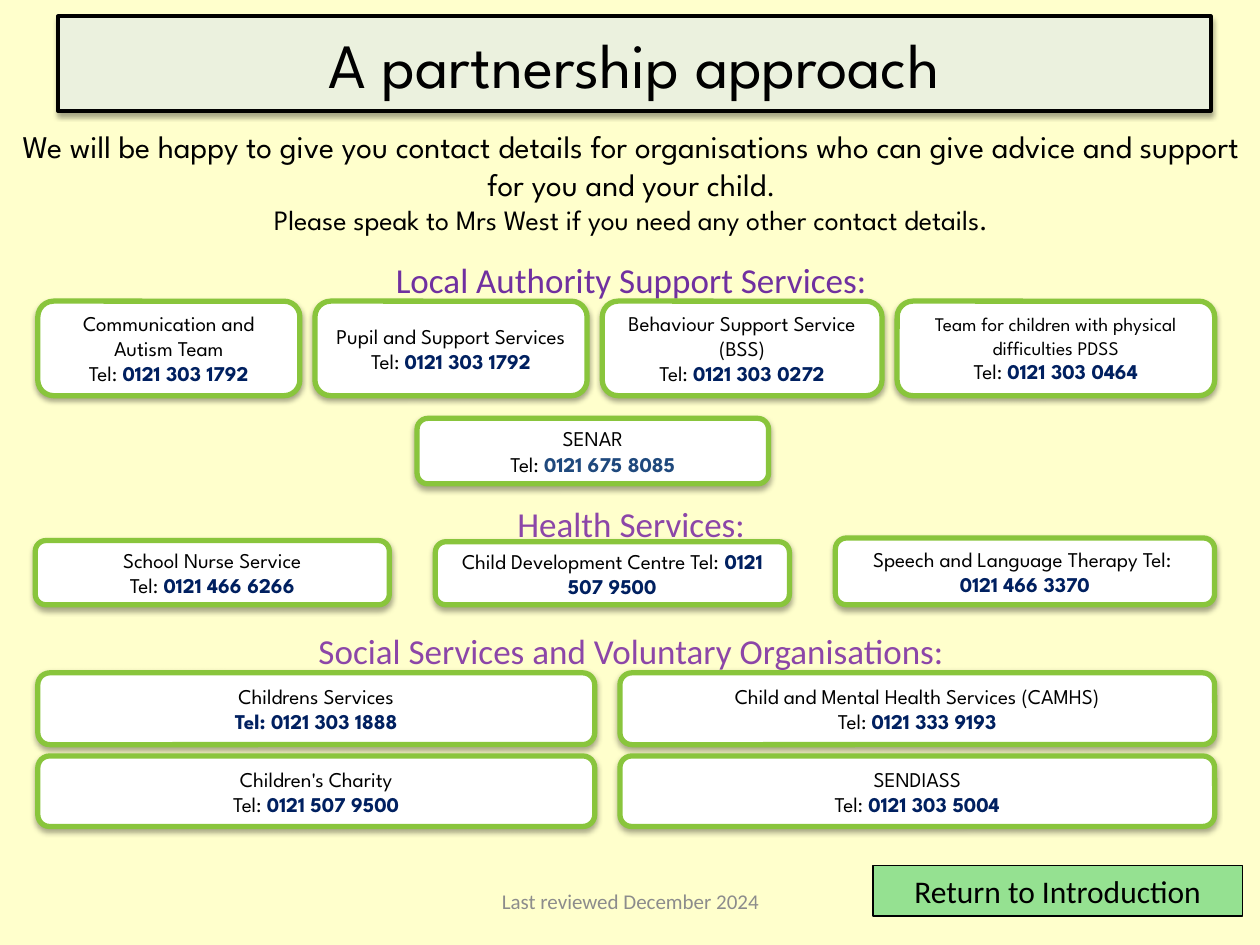
from dataclasses import dataclass
from typing import Optional

from lxml.etree import SubElement
from pptx import Presentation
from pptx.dml.color import RGBColor
from pptx.enum.shapes import MSO_SHAPE as Shape
from pptx.enum.text import MSO_ANCHOR as Anchor, PP_ALIGN as Align
from pptx.oxml.ns import qn
from pptx.util import Inches, Pt

COLS, ROWS = 100, 75
SLIDE_W, SLIDE_H = Inches(10), Inches(7.5)

BLACK = RGBColor(0x00, 0x00, 0x00)
WHITE = RGBColor(0xFF, 0xFF, 0xFF)
CREAM = RGBColor(0xFF, 0xFF, 0xCC)
PALE_GREEN = RGBColor(0xEB, 0xF1, 0xDE)
CARD_GREEN = RGBColor(0x89, 0xC5, 0x3C)
BUTTON_GREEN = RGBColor(0x95, 0xE1, 0x91)
NAVY = RGBColor(0x00, 0x20, 0x60)
BLUE = RGBColor(0x1F, 0x49, 0x7D)
PURPLE = RGBColor(0x70, 0x30, 0xA0)
LIGHT_PURPLE = RGBColor(0x8C, 0x46, 0xA8)
GREY = RGBColor(0x8C, 0x8C, 0x8C)

SPARTAN, CALIBRI = "League Spartan", "Calibri"


@dataclass(frozen=True)
class Box:
    """A place on the grid, in columns and rows."""
    col: float
    row: float
    cols: float
    rows: float

    def emu(self) -> tuple[int, int, int, int]:
        x, y = SLIDE_W / COLS, SLIDE_H / ROWS
        return (round(self.col * x), round(self.row * y),
                round(self.cols * x), round(self.rows * y))


@dataclass(frozen=True)
class Card:
    name: str
    phone: str
    cols: float
    rows: float
    label: str = "Tel: "
    size: float = 12
    colour: RGBColor = NAVY
    label_colour: RGBColor = BLACK
    one_paragraph: bool = False


@dataclass(frozen=True)
class CardRow:
    """Cards side by side with equal gaps, standing on a common bottom line."""
    left: float
    bottom: float
    gap: float
    cards: tuple[Card, ...]


@dataclass(frozen=True)
class Heading:
    text: str
    row: float
    colour: RGBColor


HEADINGS = (
    Heading("Local Authority Support Services:", 20, PURPLE),
    Heading("Health Services:", 39.4, LIGHT_PURPLE),
    Heading("Social Services and Voluntary Organisations:", 49.5, LIGHT_PURPLE),
)

CARD_ROWS = (
    CardRow(3, 31.4, 1.2, (
        Card("Communication and Autism Team", "0121 303 1792", 20.8, 7.5),
        Card("Pupil and Support Services", "0121 303 1792", 21.6, 7.5),
        Card("Behaviour Support Service (BSS)", "0121 303 0272", 22.2, 7.5),
        Card("Team for children with physical difficulties PDSS",
             "0121 303 0464", 25.2, 7.5, size=11),
    )),
    CardRow(33.1, 38.4, 0, (
        Card("SENAR", "0121 675 8085", 27.9, 5.2, colour=BLUE),
    )),
    CardRow(2.8, 48, 3.65, (
        Card("School Nurse Service", "0121 466 6266", 28.1, 5.1),
        Card("Child Development Centre", "0121 507 9500", 28.1, 5, one_paragraph=True),
        Card("Speech and Language Therapy", "\v0121 466 3370", 30.1, 5.3,
             one_paragraph=True),
    )),
    CardRow(3, 59.1, 2, (
        Card("Childrens Services", "0121 303 1888", 44.2, 5.7, label_colour=NAVY),
        Card("Child and Mental Health Services (CAMHS)", "0121 333 9193", 47.2, 5.7),
    )),
    CardRow(3, 65.6, 2, (
        Card("Children's Charity", "0121 507 9500", 44.2, 5.6),
        Card("SENDIASS", "0121 303 5004", 47.2, 5.6),
    )),
)


def add_text(p, text: str, *, size: float, font: str = SPARTAN,
             colour: RGBColor = BLACK, bold: bool = False) -> None:
    """Append text to a centred paragraph; a vertical tab starts a new line."""
    p.alignment = Align.CENTER
    for i, line in enumerate(text.split("\v")):
        if i:
            p.add_line_break()
        if line:
            r = p.add_run()
            r.text = line
            r.font.size, r.font.name, r.font.bold = Pt(size), font, bold
            r.font.color.rgb = colour


def add_text_box(s, box: Box, anchor: Anchor = Anchor.TOP):
    tf = s.shapes.add_textbox(*box.emu()).text_frame
    tf.word_wrap = True
    tf.vertical_anchor = anchor
    return tf


def add_shadow(sp) -> None:
    effects = sp._element.spPr.find(qn("a:effectLst"))
    shadow = SubElement(effects, qn("a:outerShdw"), blurRad="40000", dist="23000",
                        dir="5400000", rotWithShape="0")
    colour = SubElement(shadow, qn("a:srgbClr"), val=str(BLACK))
    SubElement(colour, qn("a:alpha"), val="35000")


def add_panel(s, kind: Shape, box: Box, fill: RGBColor, line: RGBColor,
              width: float, shadow: bool = True):
    sp = s.shapes.add_shape(kind, *box.emu())
    sp.shadow.inherit = False
    sp.fill.solid()
    sp.fill.fore_color.rgb = fill
    sp.line.color.rgb = line
    sp.line.width = Pt(width)
    if shadow:
        add_shadow(sp)
    tf = sp.text_frame
    tf.word_wrap = True
    tf.vertical_anchor = Anchor.MIDDLE
    return tf


def add_card(s, card: Card, col: float, bottom: float) -> None:
    box = Box(col, bottom - card.rows, card.cols, card.rows)
    tf = add_panel(s, Shape.ROUNDED_RECTANGLE, box, WHITE, CARD_GREEN, 3)
    p: Optional[object] = tf.paragraphs[0]
    add_text(p, card.name + (" " if card.one_paragraph else ""), size=card.size)
    if not card.one_paragraph:
        p = tf.add_paragraph()
    add_text(p, card.label, size=12, colour=card.label_colour,
             bold=card.label_colour == NAVY)
    add_text(p, card.phone, size=12, colour=card.colour, bold=True)


def add_card_row(s, row: CardRow) -> None:
    col = row.left
    for card in row.cards:
        add_card(s, card, col, row.bottom)
        col += card.cols + row.gap


def main() -> None:
    prs = Presentation()
    prs.slide_width, prs.slide_height = SLIDE_W, SLIDE_H
    s = prs.slides.add_slide(prs.slide_layouts[6])
    s.background.fill.solid()
    s.background.fill.fore_color.rgb = CREAM

    title = add_panel(s, Shape.RECTANGLE, Box(4.6, 1.3, 91.5, 7.5), PALE_GREEN, BLACK, 2.25)
    add_text(title.paragraphs[0], "A partnership approach", size=36)

    intro = add_text_box(s, Box(0, 9.6, 100.2, 10.1))
    add_text(intro.paragraphs[0], "We will be happy to give you contact details for "
             "organisations who can give advice and support for you and your child", size=18)
    add_text(intro.paragraphs[0], ".", size=16)
    add_text(intro.add_paragraph(),
             "Please speak to Mrs West if you need any other contact details.", size=16)

    for h in HEADINGS:
        tf = add_text_box(s, Box(0.1, h.row, 100, 4.4))
        add_text(tf.paragraphs[0], h.text, size=20, font=CALIBRI, colour=h.colour)
    for row in CARD_ROWS:
        add_card_row(s, row)

    button = add_panel(s, Shape.RECTANGLE, Box(69.3, 68.7, 29.3, 4), BUTTON_GREEN, BLACK,
                       0.75, shadow=False)
    add_text(button.paragraphs[0], "Return to Introduction", size=18, font=CALIBRI)
    footer = add_text_box(s, Box(34.2, 69.5, 31.7, 4), Anchor.MIDDLE)
    add_text(footer.paragraphs[0], "Last reviewed December 2024", size=12,
             font=CALIBRI, colour=GREY)

    prs.save("out.pptx")


if __name__ == "__main__":
    main()
